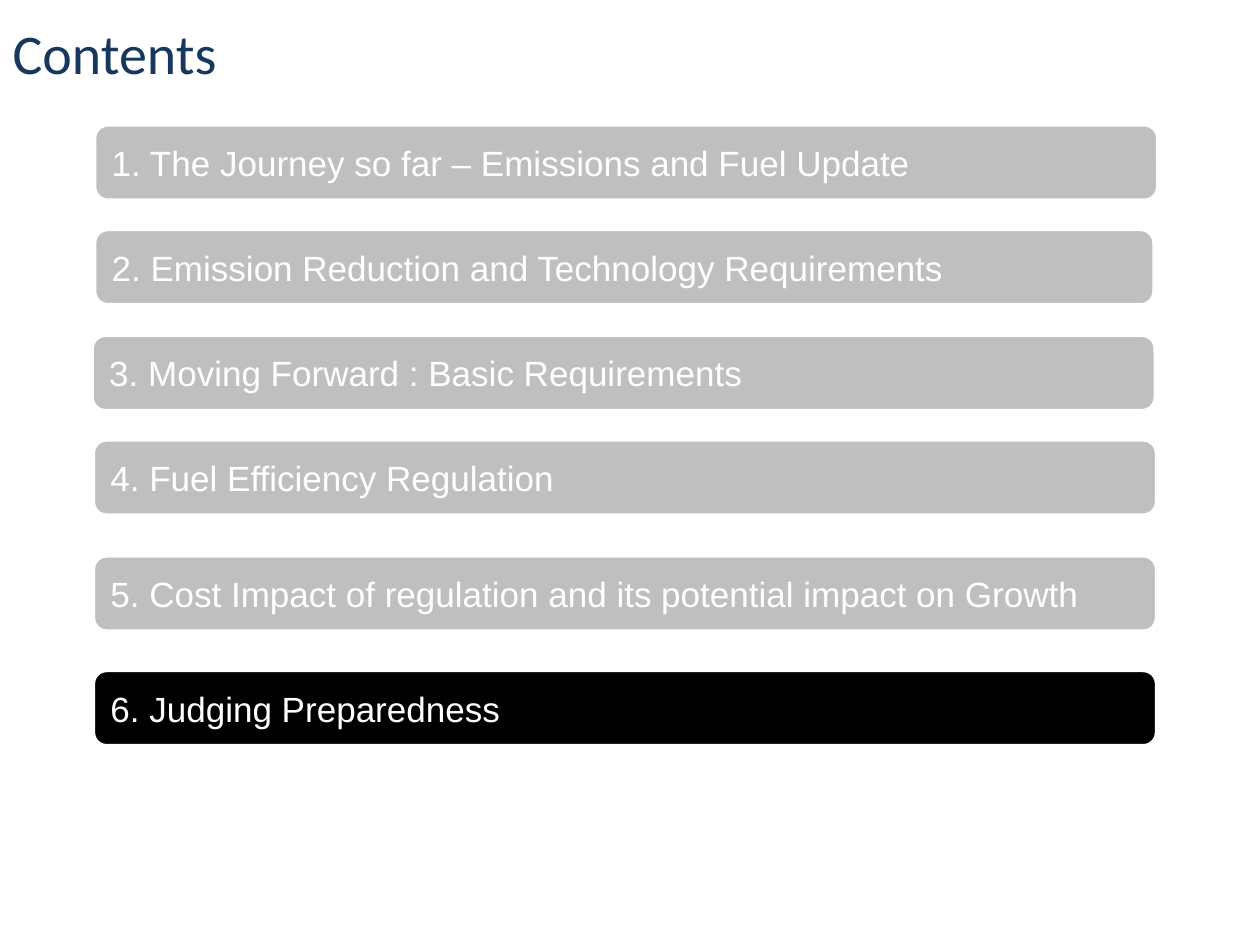
"""Build the contents slide with its six agenda bars, the current one in black."""
from dataclasses import dataclass

import pptx
import pptx.dml.color
import pptx.enum.shapes
import pptx.enum.text
import pptx.util

Inches = pptx.util.Inches
WHITE, GREY, BLACK, NAVY = "FFFFFF", "BFBFBF", "000000", "17375E"
BAR_HEIGHT = 0.58


@dataclass
class AgendaBar:
    topic: str
    left: float
    top: float
    width: float = 8.42
    fill: str = GREY


AGENDA = [
    AgendaBar("The Journey so far – Emissions and Fuel Update", 0.76, 1),
    AgendaBar("Emission Reduction and Technology Requirements", 0.76, 1.83, width=8.39),
    AgendaBar("Moving Forward : Basic Requirements", 0.74, 2.67),
    AgendaBar("Fuel Efficiency Regulation", 0.75, 3.5),
    AgendaBar("Cost Impact of regulation and its potential impact on Growth", 0.75, 4.42),
    AgendaBar("Judging Preparedness", 0.75, 5.33, fill=BLACK),
]


def paint(color_format, hex_color: str) -> None:
    color_format.rgb = pptx.dml.color.RGBColor.from_string(hex_color)


def apply_format(target, values: dict) -> None:
    for attribute, value in values.items():
        setattr(target, attribute, value)


def write_text(shape, wording: str, font_name: str, size: float, color: str) -> None:
    frame = shape.text_frame
    frame.text = wording
    apply_format(frame, {
        "word_wrap": True,
        "vertical_anchor": pptx.enum.text.MSO_ANCHOR.MIDDLE,
    })
    paragraph = frame.paragraphs[0]
    paragraph.alignment = pptx.enum.text.PP_ALIGN.LEFT
    font = paragraph.runs[0].font
    apply_format(font, {"name": font_name, "size": pptx.util.Pt(size)})
    paint(font.color, color)


def draw_bar(slide, number: int, bar: AgendaBar) -> None:
    shape = slide.shapes.add_shape(
        pptx.enum.shapes.MSO_SHAPE.FLOWCHART_ALTERNATE_PROCESS,
        Inches(bar.left), Inches(bar.top), Inches(bar.width), Inches(BAR_HEIGHT),
    )
    shape.shadow.inherit = False
    shape.fill.solid()
    paint(shape.fill.fore_color, bar.fill)
    paint(shape.line.color, WHITE)
    shape.line.width = pptx.util.Pt(0.75)
    write_text(shape, f"{number}. {bar.topic}", "Arial", 20, WHITE)


def main() -> None:
    deck = pptx.Presentation()
    apply_format(deck, {"slide_width": Inches(10), "slide_height": Inches(7.5)})
    slide = deck.slides.add_slide(deck.slide_layouts.get_by_name("Title Only"))
    heading = slide.shapes.title
    apply_format(heading, {
        "left": Inches(0), "top": Inches(0),
        "width": Inches(10), "height": Inches(0.83),
    })
    write_text(heading, "Contents", "Calibri", 32, NAVY)
    for number, bar in enumerate(AGENDA, start=1):
        draw_bar(slide, number, bar)
    deck.save("out.pptx")


if __name__ == "__main__":
    main()
